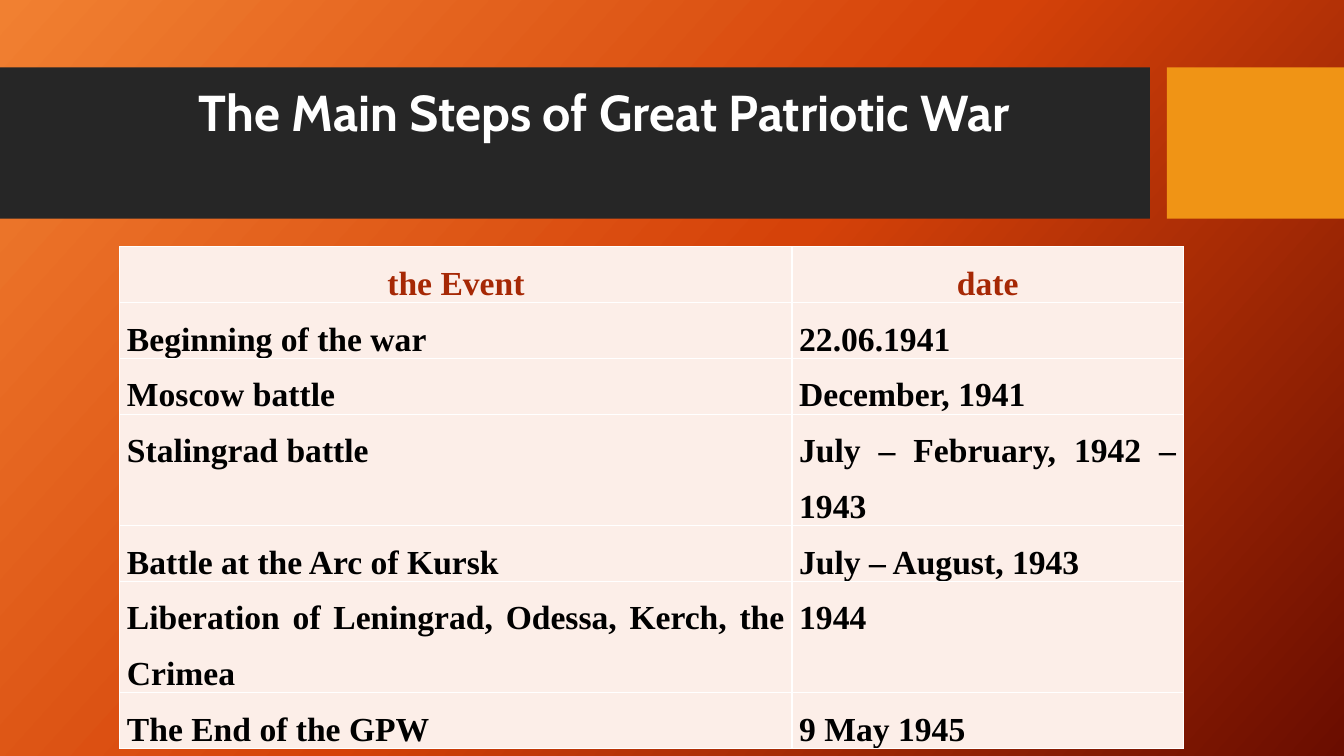
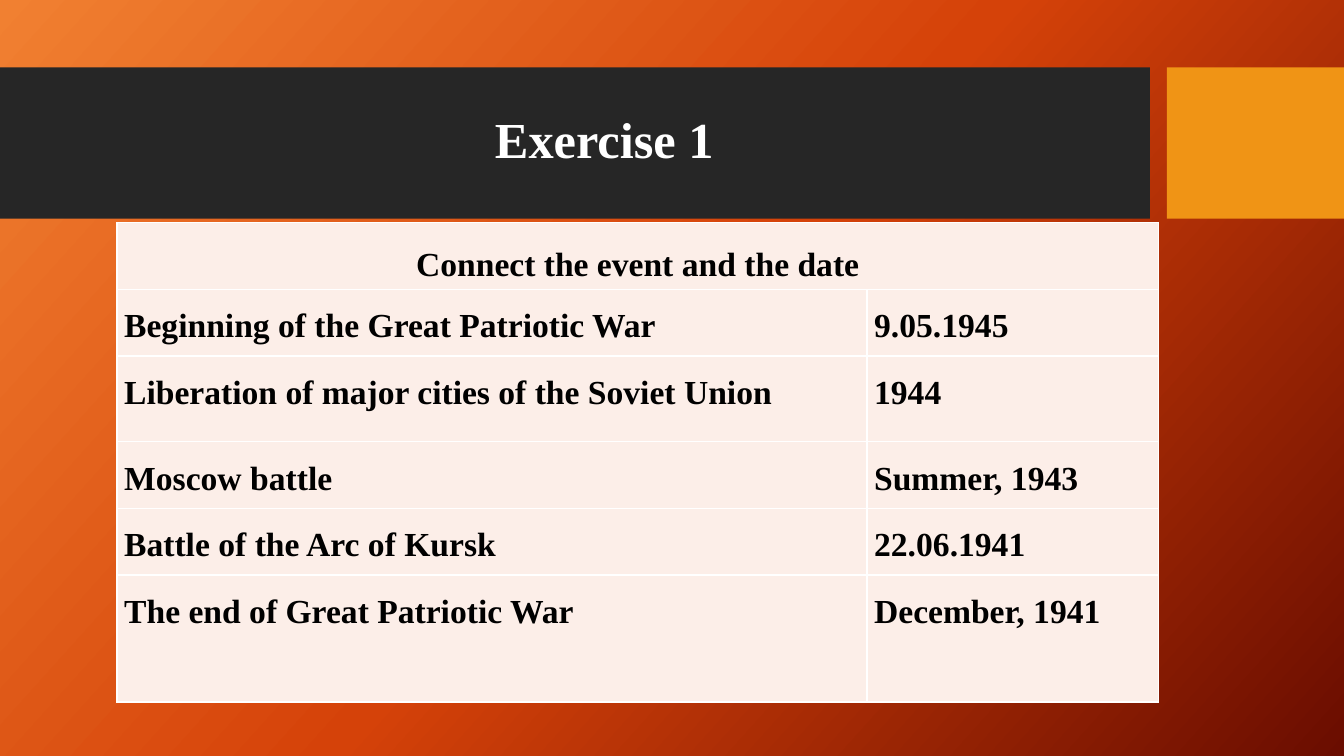
from copy import deepcopy
from dataclasses import dataclass

from pptx import Presentation
from pptx.dml.color import RGBColor
from pptx.enum import shapes, text
from pptx.oxml import parse_xml
from pptx.oxml.ns import nsdecls, qn
from pptx.util import Cm, Pt


@dataclass(frozen=True)
class Theme:
    gradient: tuple = ((0, "F18031"), (0.5, "D54209"), (1, "6A0D00"))
    angle: int = 42
    band: str = "262626"
    accent: str = "F09415"
    title: str = "FFFFFF"
    header: str = "A62805"
    body: str = "000000"
    cell: str = "FCEEE8"
    border: str = "FFFFFF"
    display_font: str = "Cabin"
    body_font: str = "Times New Roman"
    title_size: int = 36
    body_size: int = 24
    border_width: int = 1


T = Theme()
BAND_TOP, BAND_HEIGHT = 1.7, 3.81
BANDS = ((0, 28.98, T.band), (29.41, 4.46, T.accent))
TITLE_BOX = (1.88, 2.08, 26.7, 3)

EVENTS = (
    ("the Event", "date"),
    ("Beginning of the war", "22.06.1941"),
    ("Moscow battle", "December, 1941"),
    ("Stalingrad battle", "July – February, 1942 – 1943"),
    ("Battle at the Arc of Kursk", "July – August, 1943"),
    ("Liberation of Leningrad, Odessa, Kerch, the Crimea", "1944"),
    ("The End of the GPW", "9 May 1945"),
)
EXERCISE = (
    ("Connect the event and the date",),
    ("Beginning of the Great Patriotic War", "9.05.1945"),
    ("Liberation of major cities of the Soviet Union", "1944"),
    ("Moscow battle", "Summer, 1943"),
    ("Battle of the Arc of Kursk", "22.06.1941"),
    ("The end of Great Patriotic War", "December, 1941"),
)


def rgb(value):
    return RGBColor.from_string(value)


def set_background(master):
    fill = master.background.fill
    fill.gradient()
    fill.gradient_angle = 360 - T.angle
    stops = master.element.find(".//" + qn("a:gsLst"))
    stops.append(deepcopy(stops[-1]))
    for stop, (position, color) in zip(fill.gradient_stops, T.gradient):
        stop.position = position
        stop.color.rgb = rgb(color)


def format_text(p, font, size, color, align, spacing):
    p.alignment = align
    p.line_spacing = spacing
    for r in p.runs:
        r.font.name = font
        r.font.size = Pt(size)
        r.font.bold = True
        r.font.color.rgb = rgb(color)


def add_bands(s):
    for i, (left, width, color) in enumerate(BANDS):
        sp = s.shapes.add_shape(shapes.MSO_SHAPE.RECTANGLE, Cm(left), Cm(BAND_TOP),
                                Cm(width), Cm(BAND_HEIGHT))
        sp.shadow.inherit = False
        sp.fill.solid()
        sp.fill.fore_color.rgb = rgb(color)
        sp.line.fill.background()
        s.shapes.element.insert(2 + i, sp.element)


def add_titled_slide(prs, title, font, anchor):
    s = prs.slides.add_slide(prs.slide_layouts[5])
    add_bands(s)
    sp = s.shapes.title
    sp.left, sp.top, sp.width, sp.height = map(Cm, TITLE_BOX)
    tf = sp.text_frame
    tf.text = title
    tf.word_wrap = True
    tf.auto_size = text.MSO_AUTO_SIZE.NONE
    tf.vertical_anchor = anchor
    format_text(tf.paragraphs[0], font, T.title_size, T.title, text.PP_ALIGN.CENTER, 0.9)
    return s


def add_borders(cell):
    tcPr = cell._tc.get_or_add_tcPr()
    for side in "LRTB":
        tcPr.append(parse_xml(
            f'<a:ln{side} {nsdecls("a")} w="{Pt(T.border_width)}"><a:solidFill>'
            f'<a:srgbClr val="{T.border}"/></a:solidFill></a:ln{side}>'))


def format_cell(cell, is_header, header_color):
    add_borders(cell)
    cell.fill.solid()
    cell.fill.fore_color.rgb = rgb(T.cell)
    cell.margin_left = cell.margin_right = Cm(0.18)
    cell.margin_top = cell.margin_bottom = 0
    cell.vertical_anchor = text.MSO_ANCHOR.MIDDLE if is_header else text.MSO_ANCHOR.TOP
    format_text(cell.text_frame.paragraphs[0], T.body_font, T.body_size,
                header_color if is_header else T.body,
                text.PP_ALIGN.CENTER if is_header else text.PP_ALIGN.JUSTIFY, 1.5)


def add_date_table(s, left, top, widths, heights, rows, header_color):
    frame = s.shapes.add_table(len(rows), len(widths), Cm(left), Cm(top),
                               Cm(sum(widths)), Cm(sum(heights)))
    table = frame.table
    table.first_row = table.horz_banding = False
    for column, width in zip(table.columns, widths):
        column.width = Cm(width)
    for i, (values, height) in enumerate(zip(rows, heights)):
        table.rows[i].height = Cm(height)
        for j, value in enumerate(values):
            table.cell(i, j).text = value
        for cell in table.rows[i].cells:
            format_cell(cell, i == 0, header_color)
        if len(values) < len(widths):
            table.cell(i, 0).merge(table.cell(i, len(widths) - 1))


def main():
    prs = Presentation()
    prs.slide_width, prs.slide_height = Cm(33.87), Cm(19.05)
    set_background(prs.slide_master)

    s = add_titled_slide(prs, "The Main Steps of Great Patriotic War",
                         T.display_font, text.MSO_ANCHOR.TOP)
    add_date_table(s, 3.02, 6.22, (16.94, 9.86),
                   (1.4, 1.4, 1.4, 2.8, 1.4, 2.8, 1.4), EVENTS, T.header)

    s = add_titled_slide(prs, "Exercise 1", T.body_font, text.MSO_ANCHOR.MIDDLE)
    add_date_table(s, 2.95, 5.61, (18.9, 7.34),
                   (1.68, 1.68, 2.16, 1.68, 1.68, 3.2), EXERCISE, T.body)

    prs.save("out.pptx")


if __name__ == "__main__":
    main()
